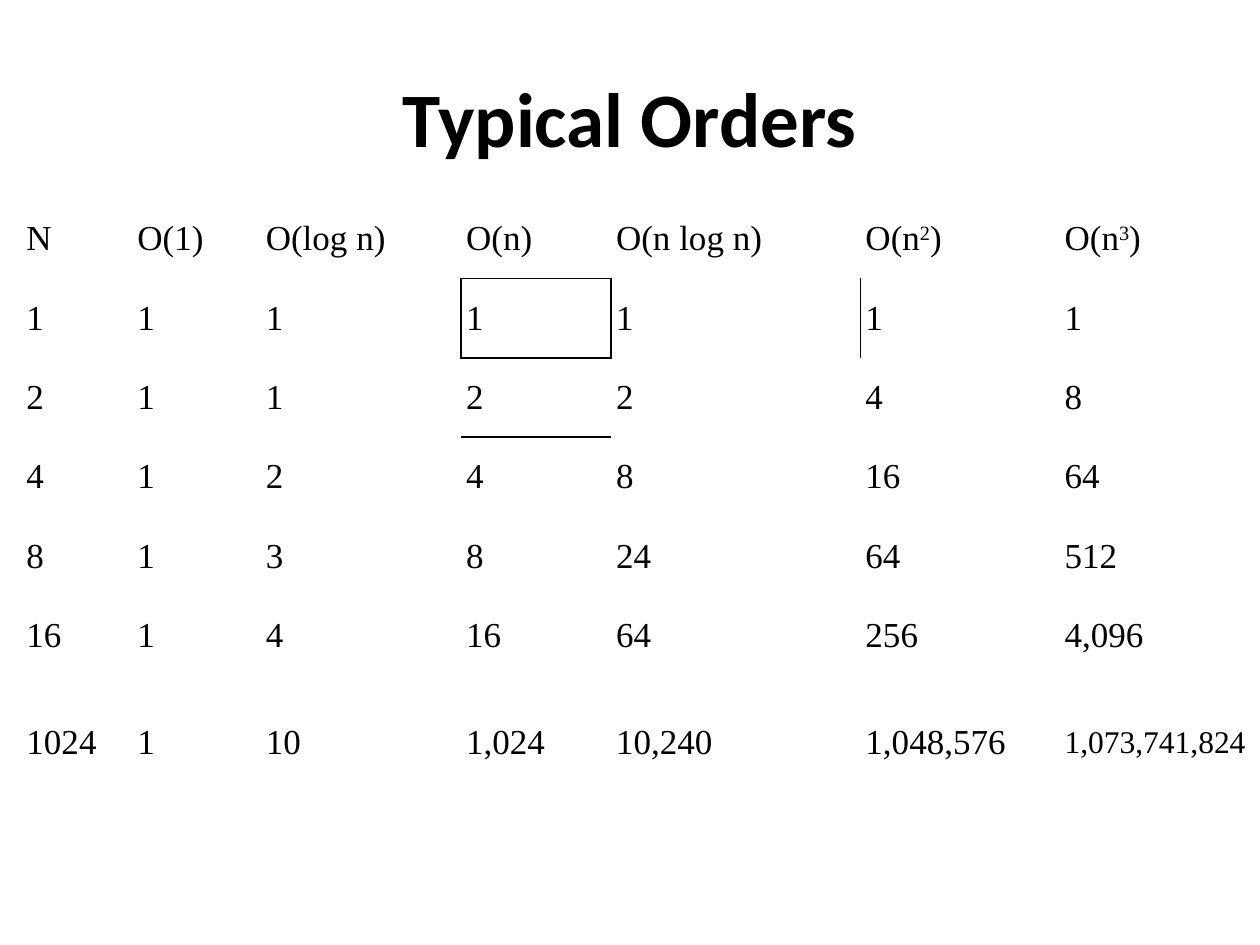
from lxml import etree
from pptx import Presentation
from pptx.dml.color import RGBColor
from pptx.enum.text import MSO_ANCHOR, PP_ALIGN
from pptx.oxml.ns import qn
from pptx.util import Inches, Pt

MID = MSO_ANCHOR.MIDDLE
CENTER = PP_ALIGN.CENTER

# Content: text between carets is raised
TITLE = "Typical Orders"
ROWS = [
    ("N", "O(1)", "O(log n)", "O(n)", "O(n log n)", "O(n^2^)", "O(n^3^)"),
    ("1", "1", "1", "1", "1", "1", "1"),
    ("2", "1", "1", "2", "2", "4", "8"),
    ("4", "1", "2", "4", "8", "16", "64"),
    ("8", "1", "3", "8", "24", "64", "512"),
    ("16", "1", "4", "16", "64", "256", "4,096"),
    ("1024", "1", "10", "1,024", "10,240", "1,048,576", "1,073,741,824"),
]
BOXED = (1, 3)

# Theme and layout
INK = RGBColor(0, 0, 0)
THEME = {
    "title": {"name": "Calibri", "size": Pt(44), "bold": True},
    "cell": {"name": "Times New Roman", "size": Pt(20), "bold": False},
    "long": {"name": "Times New Roman", "size": Pt(18), "bold": False},
}
COLS = [0.88, 1.02, 1.59, 1.19, 1.98, 1.58, 1.58]
ROW_H, LAST_H = 0.63, 1.07
LEFT, TOP, PAD = 0.17, 1.58, 0.04
LONG = 10
PLAIN = "{2D5ABB26-0587-4C30-8999-92F81FD0307C}"


def apply(item, values):
    for key, value in values.items():
        setattr(item, key, value)


def write(para, text, style):
    for i, part in enumerate(text.split("^")):
        run = para.add_run()
        run.text = part
        apply(run.font, THEME[style])
        run.font.color.rgb = INK
        if i % 2:
            run.font._element.set("baseline", "30000")


def edge(cell, sides):
    props = cell._tc.get_or_add_tcPr()
    for i, side in enumerate(sides):
        line = etree.Element(qn("a:ln" + side), w=str(Pt(1)))
        fill = etree.SubElement(line, qn("a:solidFill"))
        etree.SubElement(fill, qn("a:srgbClr"), val=str(INK))
        props.insert(i, line)


deck = Presentation()
apply(deck, {"slide_width": Inches(10), "slide_height": Inches(7.5)})
slide = deck.slides.add_slide(deck.slide_layouts[5])

# Title
title = slide.shapes.title
apply(title, {"left": Inches(0.5), "top": Inches(0.3),
              "width": Inches(9), "height": Inches(1.25)})
apply(title.text_frame, {"vertical_anchor": MID, "word_wrap": True})
head = title.text_frame.paragraphs[0]
head.alignment = CENTER
write(head, TITLE, "title")

# Table grid
heights = [ROW_H] * (len(ROWS) - 1) + [LAST_H]
frame = slide.shapes.add_table(
    len(ROWS), len(COLS), Inches(LEFT), Inches(TOP),
    Inches(sum(COLS)), Inches(sum(heights)))
table = frame.table
apply(table, {"first_row": False, "horz_banding": False})
table._tbl.tblPr.find(qn("a:tableStyleId")).text = PLAIN
for col, width in zip(table.columns, COLS):
    col.width = Inches(width)
for row, height in zip(table.rows, heights):
    row.height = Inches(height)

# Cells
sides = ("left", "right", "top", "bottom")
pads = {"margin_" + side: Inches(PAD) for side in sides}
for r, row in enumerate(ROWS):
    for c, text in enumerate(row):
        cell = table.cell(r, c)
        apply(cell, {**pads, "vertical_anchor": MID})
        cell.fill.background()
        style = "long" if len(text) > LONG else "cell"
        write(cell.text_frame.paragraphs[0], text, style)

# Box round one cell, shared with its neighbours
r, c = BOXED
for down, right, names in [(0, 0, "LRTB"), (-1, 0, "B"), (1, 0, "T"),
                           (0, -1, "R"), (0, 1, "L")]:
    edge(table.cell(r + down, c + right), names)

deck.save("out.pptx")
